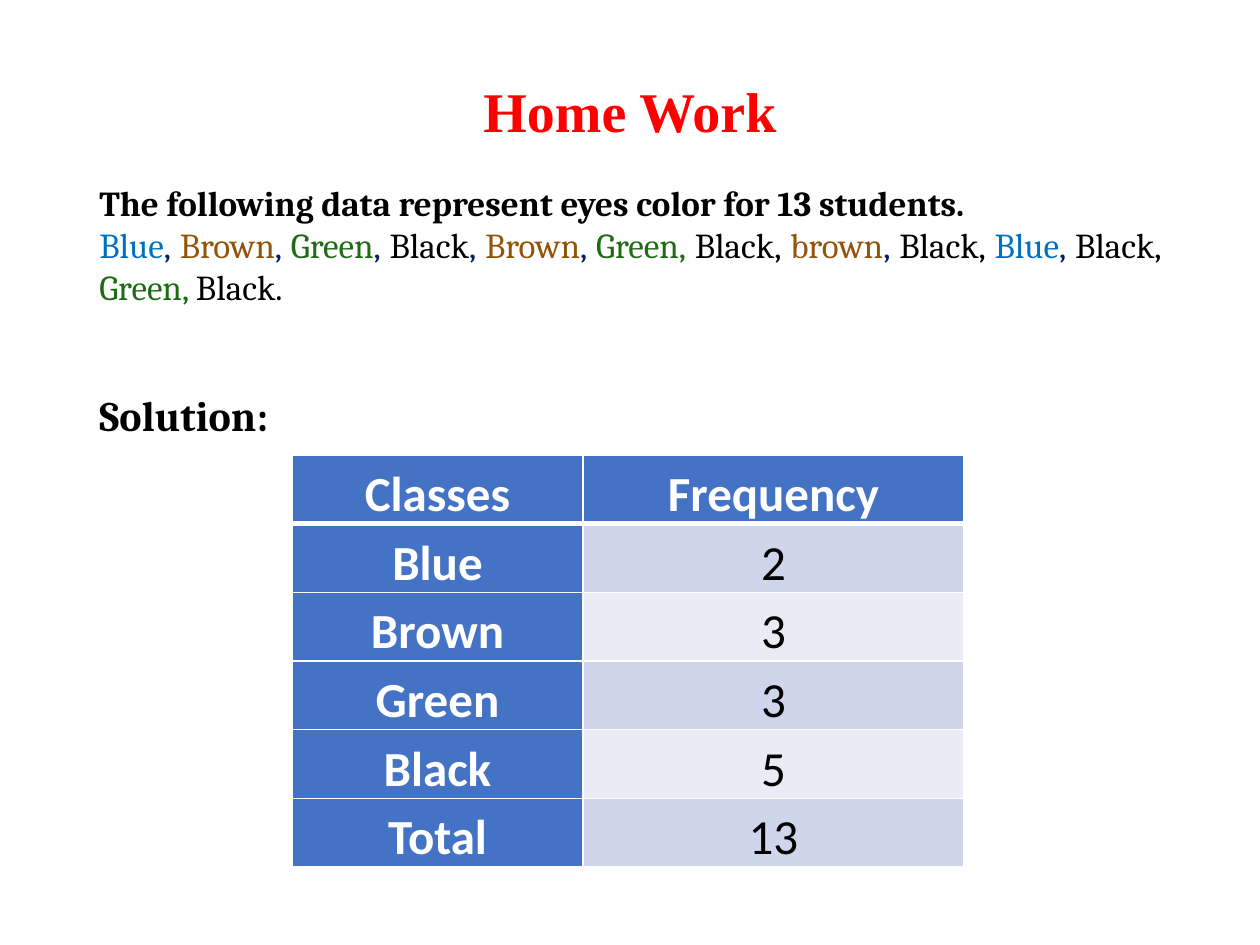
import dataclasses

import lxml.etree
import pptx
import pptx.dml.color
import pptx.enum.text
import pptx.oxml.ns
import pptx.util

ALIGN = pptx.enum.text.PP_ALIGN
ANCHOR = pptx.enum.text.MSO_ANCHOR


@dataclasses.dataclass(frozen=True)
class Theme:
    """Colours, fonts and type sizes of the slide."""
    red: str = "FF0000"
    black: str = "000000"
    white: str = "FFFFFF"
    comma: str = "002060"
    header: str = "4472C4"
    bands: tuple = ("CFD5EA", "E9EBF5")
    title_font: str = "Times New Roman"
    body_font: str = "Cambria"
    table_font: str = "Calibri"
    title_size: int = 32
    body_size: int = 20
    solution_size: int = 24
    table_size: int = 28


THEME = Theme()
EYE_COLORS = {"blue": "0070C0", "brown": "93540A", "green": "1D6B13",
              "black": THEME.black, "": THEME.comma}
EYE_DATA = ["Blue", ", ", "Brown", ", ", "Green", ", ", "Black", ", ", "Brown", ", ",
            "Green, ", "Black, ", "brown", ", ", "Black, ", "Blue", ", ", "Black, ",
            "Green, ", "Black."]
FREQUENCIES = [("Classes", "Frequency"), ("Blue", "2"), ("Brown", "3"),
               ("Green", "3"), ("Black", "5"), ("Total", "13")]


def px(count):
    """Turn pixels into EMU at 126 pixels to the inch."""
    return pptx.util.Emu(round(count * 914400 / 126))


def add_span(para, text, font, size, color, bold=False):
    """Add a formatted run to a paragraph."""
    span = para.add_run()
    span.text = text
    span.font.name = font
    span.font.size = pptx.util.Pt(size)
    span.font.bold = bold
    span.font.color.rgb = pptx.dml.color.RGBColor.from_string(color)


def add_box(page, left, top, width, height, anchor=ANCHOR.TOP):
    """Add a wrapping text box and return its text frame."""
    frame = page.shapes.add_textbox(px(left), px(top), px(width), px(height)).text_frame
    frame.word_wrap = True
    frame.vertical_anchor = anchor
    return frame


def add_title(page):
    """Add the centred slide title."""
    para = add_box(page, 87, 53, 1086, 122, ANCHOR.MIDDLE).paragraphs[0]
    para.alignment = ALIGN.CENTER
    para.line_spacing = 0.9
    add_span(para, "Home Work", THEME.title_font, THEME.title_size, THEME.red, bold=True)


def add_exercise(page):
    """Add the question, its coloured data and the solution heading."""
    frame = add_box(page, 87, 175, 1086, 675)
    add_span(frame.paragraphs[0], "The following data represent eyes color for 13 students.",
             THEME.body_font, THEME.body_size, THEME.black, bold=True)
    data = frame.add_paragraph()
    data.alignment = ALIGN.JUSTIFY
    for text in EYE_DATA:
        color = EYE_COLORS[text.strip(" ,.").lower()]
        add_span(data, text, THEME.body_font, THEME.body_size, color)
    solution = frame.add_paragraph()
    solution.alignment = ALIGN.JUSTIFY
    solution.space_before = pptx.util.Pt(47)
    add_span(solution, "Solution:", THEME.body_font, THEME.solution_size,
             THEME.black, bold=True)


def add_borders(cell, color, bottom):
    """Draw one-point cell borders with a chosen bottom width."""
    properties = cell._tc.get_or_add_tcPr()
    qn = pptx.oxml.ns.qn
    for side, points in (("L", 1), ("R", 1), ("T", 1), ("B", bottom)):
        line = lxml.etree.SubElement(properties, qn(f"a:ln{side}"),
                                     w=str(pptx.util.Pt(points)))
        fill = lxml.etree.SubElement(line, qn("a:solidFill"))
        lxml.etree.SubElement(fill, qn("a:srgbClr"), val=color)


def fill_cell(cell, text, fill, color, bold, bottom):
    """Give a table cell its text, borders and fill."""
    cell.margin_left = cell.margin_right = px(9)
    cell.margin_top, cell.margin_bottom = px(1), 0
    cell.vertical_anchor = ANCHOR.MIDDLE
    add_borders(cell, THEME.white, bottom)
    cell.fill.solid()
    cell.fill.fore_color.rgb = pptx.dml.color.RGBColor.from_string(fill)
    para = cell.text_frame.paragraphs[0]
    para.alignment = ALIGN.CENTER
    para.line_spacing = 1.15
    para.space_after = pptx.util.Pt(10)
    add_span(para, text, THEME.table_font, THEME.table_size, color, bold)


def add_frequency_table(page):
    """Add the table of eye colours and their frequencies."""
    widths, row_height = (291, 381), 68
    table = page.shapes.add_table(len(FREQUENCIES), len(widths), px(292), px(455),
                                  px(sum(widths)), px(row_height * len(FREQUENCIES))).table
    table.first_col = True
    for column, width in zip(table.columns, widths):
        column.width = px(width)
    for row, values in enumerate(FREQUENCIES):
        for column, text in enumerate(values):
            heading = row == 0 or column == 0
            fill = THEME.header if heading else THEME.bands[(row - 1) % 2]
            fill_cell(table.cell(row, column), text, fill,
                      THEME.white if heading else THEME.black, heading,
                      bottom=3 if row == 0 else 1)


def main():
    """Build the slide and save it."""
    deck = pptx.Presentation()
    deck.slide_width, deck.slide_height = px(1260), px(945)
    page = deck.slides.add_slide(deck.slide_layouts[6])
    add_title(page)
    add_exercise(page)
    add_frequency_table(page)
    deck.save("out.pptx")


if __name__ == "__main__":
    main()
